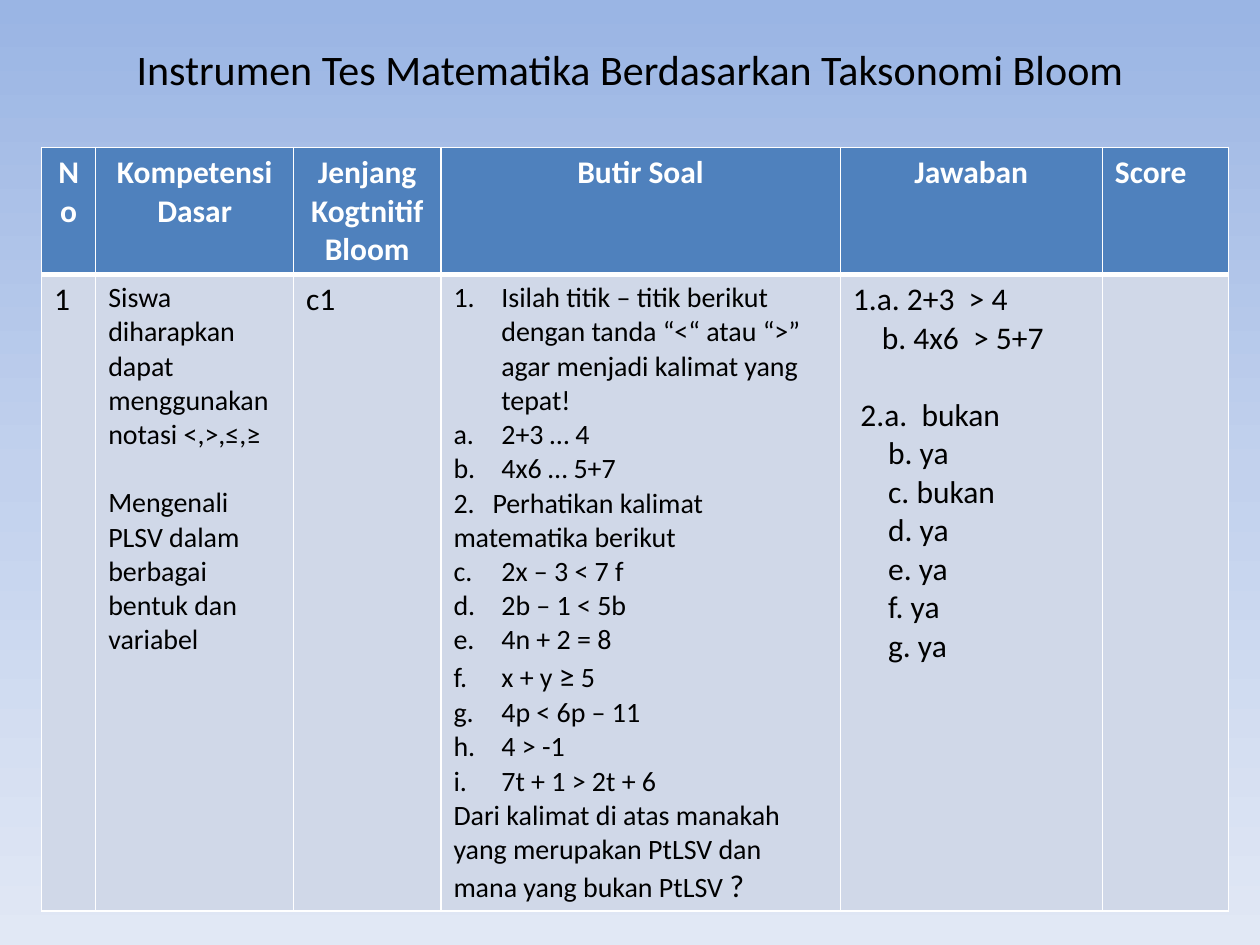
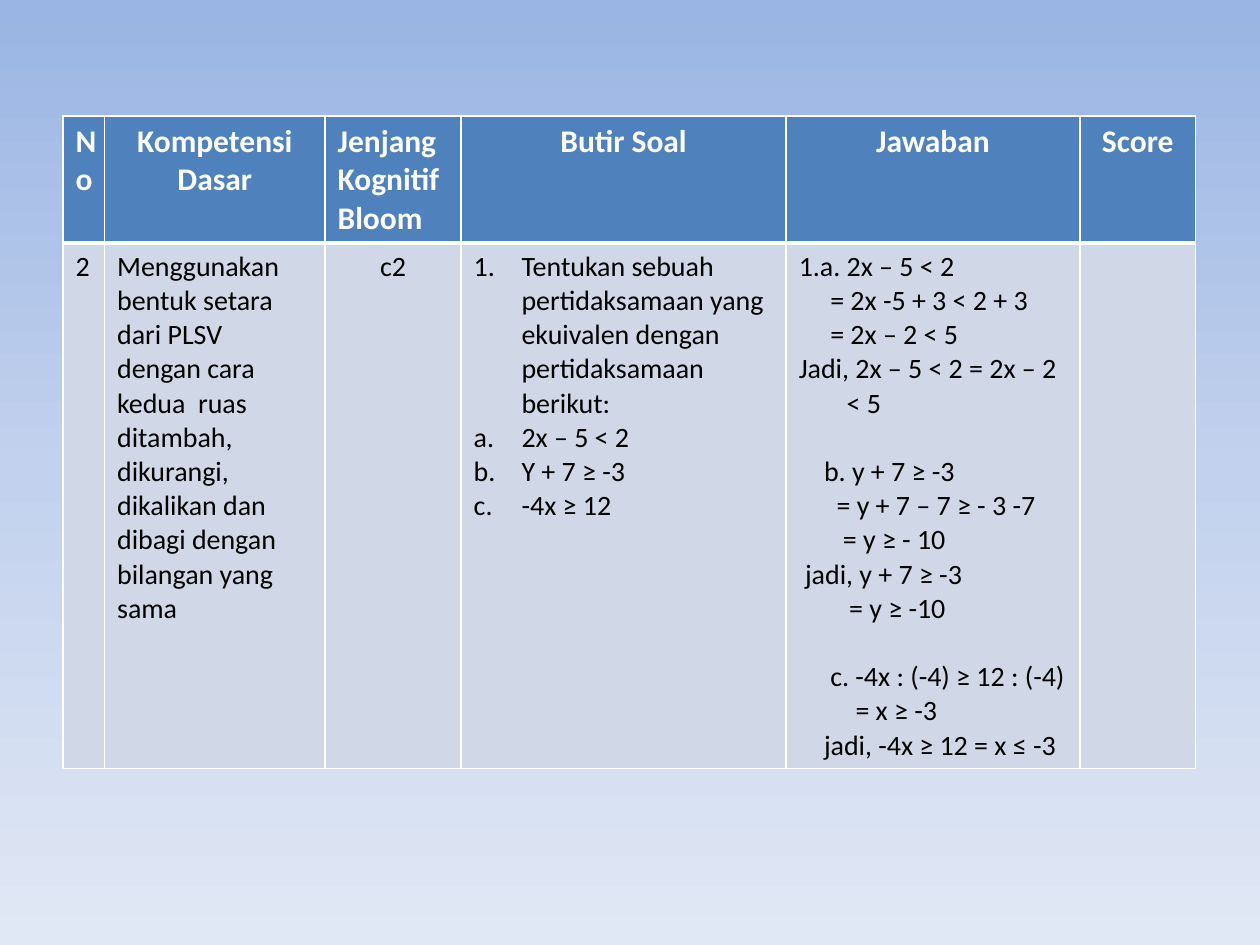
from copy import deepcopy

from lxml import etree
from pptx import Presentation
from pptx import util as u
from pptx.dml import color as colors
from pptx.enum import text as t
from pptx.oxml import ns

BACKGROUND = [(0, "9AB5E4"), (0.5, "C2D1ED"), (1, "E1E8F5")]
HEADER_FILL, BODY_FILL = "4F81BD", "D0D8E8"
WHITE, BLACK = "FFFFFF", "000000"
LEFT, CENTER = t.PP_ALIGN.LEFT, t.PP_ALIGN.CENTER
HANG = 0.38
LINE_16, LINE_18 = 19.5, 22  # height of one text line, in points


def rgb(value):
    return colors.RGBColor.from_string(value)


def write(frame, text, size=16, color=BLACK, bold=False, align=LEFT, left=0,
          hang=0, before=0, number=None, start=1, large=""):
    """Add a paragraph; number is an autonumber type, large a part set in 18 pt."""
    paragraph = frame.add_paragraph() if frame.text else frame.paragraphs[0]
    paragraph.alignment = align
    paragraph.space_before = u.Pt(before)
    properties = paragraph._p.get_or_add_pPr()
    properties.set("marL", str(u.Inches(left)))
    properties.set("indent", str(u.Inches(-hang)))
    if number:
        bullet = etree.SubElement(properties, ns.qn("a:buAutoNum"), type=number)
        if start > 1:
            bullet.set("startAt", str(start))
    parts = text.partition(large) if large else (text,)
    for part in filter(None, parts):
        run = paragraph.add_run()
        run.text = part
        run.font.name = "Calibri"
        run.font.size = u.Pt(18 if part == large else size)
        run.font.bold = bold
        run.font.color.rgb = rgb(color)


number_item = dict(left=HANG, hang=HANG, number="arabicPeriod")
letter_item = dict(left=HANG, hang=HANG, number="alphaLcPeriod")
later_letter = dict(letter_item, start=3)
big = dict(size=18)

# Each body cell is a list of (text, format) pairs.
competence_1 = [
    ("Siswa diharapkan dapat menggunakan notasi <,>,≤,≥", {}),
    ("Mengenali PLSV dalam berbagai bentuk dan variabel", dict(before=LINE_16)),
]
questions_1 = [
    ("Isilah titik – titik berikut dengan tanda “<“ atau “>” agar menjadi "
     "kalimat yang tepat!", number_item),
    ("2+3 … 4", letter_item),
    ("4x6 … 5+7", letter_item),
    ("Perhatikan kalimat",
     dict(left=0.31, hang=0.31, number="arabicPeriod", start=2)),
    ("matematika berikut", {}),
    ("2x – 3 < 7 f", later_letter),
    ("2b – 1 < 5b", later_letter),
    ("4n + 2 = 8", later_letter),
    ("x + y ≥ 5", dict(later_letter, large="≥")),
    ("4p < 6p – 11", later_letter),
    ("4 > -1", later_letter),
    ("7t + 1 > 2t + 6", later_letter),
    ("Dari kalimat di atas manakah yang merupakan PtLSV dan mana yang bukan "
     "PtLSV ?", dict(large="?")),
]
answers_1 = [
    ("1.a. 2+3  > 4", big),
    ("b. 4x6  > 5+7", dict(big, left=0.23)),
    ("2.a.  bukan", dict(big, left=0.06, before=LINE_18)),
] + [(answer, dict(big, left=0.28))
     for answer in ("b. ya", "c. bukan", "d. ya", "e. ya", "f. ya", "g. ya")]

competence_2 = [
    ("Menggunakan bentuk setara dari PLSV dengan cara kedua  ruas ditambah, "
     "dikurangi, dikalikan dan dibagi dengan bilangan yang sama", {}),
]
questions_2 = [
    ("Tentukan sebuah pertidaksamaan yang ekuivalen dengan pertidaksamaan "
     "berikut:", number_item),
    ("2x – 5 < 2", letter_item),
    ("Y + 7 ≥ -3", letter_item),
    ("-4x ≥ 12", letter_item),
]
answers_2 = [
    ("1.a. 2x – 5 < 2", {}),
    ("= 2x -5 + 3 < 2 + 3", dict(left=0.25)),
    ("= 2x – 2 < 5", dict(left=0.25)),
    ("Jadi, 2x – 5 < 2 = 2x – 2 < 5", dict(left=HANG, hang=HANG)),
    ("b. y + 7 ≥ -3", dict(left=0.2, before=LINE_16)),
    ("= y + 7 – 7 ≥ - 3 -7", dict(left=0.3)),
    ("= y ≥ - 10", dict(left=0.35)),
    ("jadi, y + 7 ≥ -3", dict(left=0.05)),
    ("= y ≥ -10", dict(left=0.4)),
    ("c. -4x : (-4) ≥ 12 : (-4)", dict(left=0.25, before=LINE_16)),
    ("= x ≥ -3", dict(left=0.45)),
    ("jadi, -4x ≥ 12 = x ≤ -3", dict(left=0.2)),
]

slides = [
    dict(title="Instrumen Tes Matematika Berdasarkan Taksonomi Bloom",
         position=(0.33, 1.17), widths=(0.43, 1.57, 1.17, 3.17, 2.08, 1),
         heights=(1.01, 5.05), level="Jenjang Kogtnitif Bloom",
         left_header="Score",
         body=[[("1", big)], competence_1, [("c1", big)], questions_1,
               answers_1, []]),
    dict(title=None,
         position=(0.5, 0.92), widths=(0.33, 1.75, 1.08, 2.58, 2.33, 0.92),
         heights=(1.01, 4.17), level="Jenjang Kognitif Bloom",
         left_header="Jenjang Kognitif Bloom",
         body=[[("2", {})], competence_2, [("c2", dict(align=CENTER))],
               questions_2, answers_2, []]),
]

presentation = Presentation()
presentation.slide_width, presentation.slide_height = u.Inches(10), u.Inches(7.5)

for content in slides:
    slide = presentation.slides.add_slide(presentation.slide_layouts[6])

    fill = slide.background.fill
    fill.gradient()
    fill.gradient_angle = 270
    stop_list = slide.element.find(".//" + ns.qn("a:gsLst"))
    stop_list.append(deepcopy(stop_list[0]))
    for stop, (position, color) in zip(fill.gradient_stops, BACKGROUND):
        stop.position = position
        stop.color.rgb = rgb(color)

    if content["title"]:
        title = slide.shapes.add_textbox(
            u.Inches(0.5), u.Inches(0.17), u.Inches(9), u.Inches(0.75))
        title.text_frame.word_wrap = True
        title.text_frame.vertical_anchor = t.MSO_ANCHOR.MIDDLE
        write(title.text_frame, content["title"], size=24, align=CENTER)

    left, top = content["position"]
    widths, heights = content["widths"], content["heights"]
    table = slide.shapes.add_table(
        2, len(widths), u.Inches(left), u.Inches(top),
        u.Inches(sum(widths)), u.Inches(sum(heights))).table
    for column, width in zip(table.columns, widths):
        column.width = u.Inches(width)
    for row, height in zip(table.rows, heights):
        row.height = u.Inches(height)

    headers = ["No", "Kompetensi Dasar", content["level"], "Butir Soal",
               "Jawaban", "Score"]
    header_row = [
        [(header, dict(size=18, color=WHITE, bold=True,
                       align=LEFT if header == content["left_header"] else CENTER))]
        for header in headers]

    for row_index, row in enumerate((header_row, content["body"])):
        for column_index, paragraphs in enumerate(row):
            cell = table.cell(row_index, column_index)
            for text, text_format in paragraphs:
                write(cell.text_frame, text, **text_format)
            # Borders must come before the fill in the cell properties.
            properties = cell._tc.get_or_add_tcPr()
            for side in "LRTB":
                thick = (row_index, side) in ((0, "B"), (1, "T"))
                border = etree.SubElement(properties, ns.qn("a:ln" + side),
                                          w=str(u.Pt(3 if thick else 1)))
                solid = etree.SubElement(border, ns.qn("a:solidFill"))
                etree.SubElement(solid, ns.qn("a:srgbClr"), val=WHITE)
            cell.fill.solid()
            cell.fill.fore_color.rgb = rgb(BODY_FILL if row_index else HEADER_FILL)

presentation.save("out.pptx")
